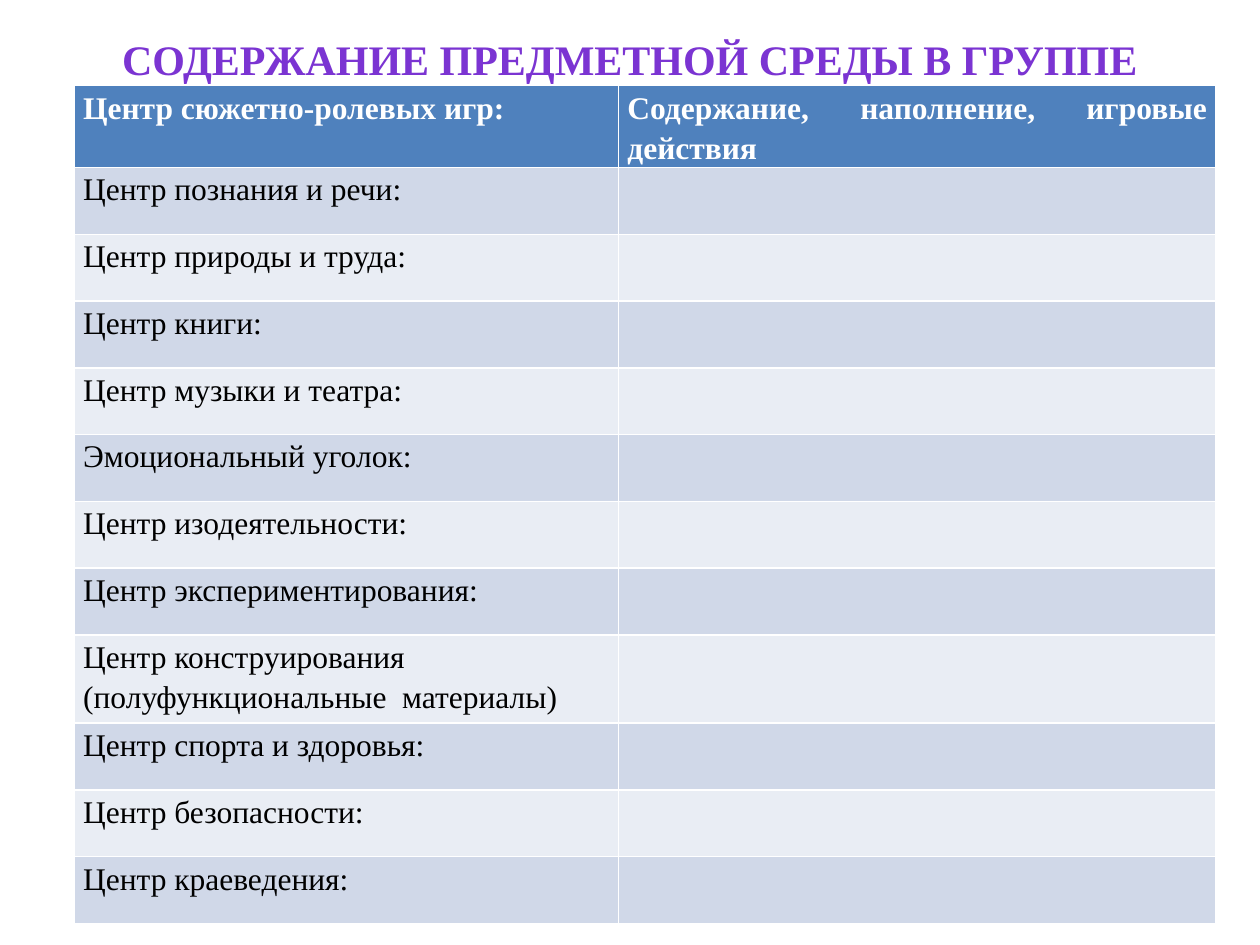
from pptx import Presentation
from pptx.dml.color import RGBColor
from pptx.enum.text import MSO_ANCHOR, PP_ALIGN
from pptx.util import Inches, Pt

CENTER, LEFT, JUSTIFY = PP_ALIGN.CENTER, PP_ALIGN.LEFT, PP_ALIGN.JUSTIFY
MIDDLE = MSO_ANCHOR.MIDDLE
FONT = "Times New Roman"
COLORS = {
    "title": "7B34D2",
    "header": "4F81BD",
    "header_text": "FFFFFF",
    "text": "000000",
    "odd_band": "D0D8E8",
    "even_band": "E9EDF4",
}

TITLE = "СОДЕРЖАНИЕ ПРЕДМЕТНОЙ СРЕДЫ В ГРУППЕ"
HEADERS = ["Центр сюжетно-ролевых игр:", "Содержание, наполнение, игровые действия"]
CENTERS = [
    "Центр познания и речи:",
    "Центр природы и труда:",
    "Центр книги:",
    "Центр музыки и театра:",
    "Эмоциональный уголок:",
    "Центр изодеятельности:",
    "Центр экспериментирования:",
    "Центр конструирования (полуфункциональные  материалы)",
    "Центр спорта и здоровья:",
    "Центр безопасности:",
    "Центр краеведения:",
]
COLUMN_WIDTHS = [4.32, 4.74]
HEADER_HEIGHT, ROW_HEIGHT, TALL_ROW_HEIGHT = 0.65, 0.53, 0.7
TALL_ROW = 8
JUSTIFIED_ROWS = 3


def write_text(text_frame, text, size=18, color="text", bold=False,
               align=LEFT, line_spacing=None):
    paragraph = text_frame.paragraphs[0]
    paragraph.alignment = align
    paragraph.line_spacing = line_spacing
    run = paragraph.add_run()
    run.text = text
    run.font.name = FONT
    run.font.size = Pt(size)
    run.font.bold = bold
    run.font.color.rgb = RGBColor.from_string(COLORS[color])


class SlideBuilder:
    """Holds the current slide and draws its elements in one style."""

    def __init__(self, presentation):
        self.slide = presentation.slides.add_slide(presentation.slide_layouts[5])

    def title(self, text, left, top, width, height):
        shape = self.slide.shapes.title
        shape.left, shape.top = Inches(left), Inches(top)
        shape.width, shape.height = Inches(width), Inches(height)
        shape.text_frame.vertical_anchor = MIDDLE
        write_text(shape.text_frame, text, size=24, color="title", bold=True, align=CENTER)

    def cell(self, cell, text, fill, **text_format):
        cell.fill.solid()
        cell.fill.fore_color.rgb = RGBColor.from_string(COLORS[fill])
        if text:
            cell.margin_left = cell.margin_right = Inches(0.07)
            cell.margin_top = cell.margin_bottom = 0
            write_text(cell.text_frame, text, line_spacing=1.15, **text_format)

    def table(self, rows, left, top, column_widths, row_heights):
        table = self.slide.shapes.add_table(
            len(rows), len(column_widths), Inches(left), Inches(top),
            Inches(sum(column_widths)), Inches(sum(row_heights))).table
        for column, width in zip(table.columns, column_widths):
            column.width = Inches(width)
        for index, (texts, height) in enumerate(zip(rows, row_heights)):
            table.rows[index].height = Inches(height)
            header = index == 0
            fill = "header" if header else "odd_band" if index % 2 else "even_band"
            for column_index, text in enumerate(texts):
                self.cell(table.cell(index, column_index), text, fill, bold=header,
                          color="header_text" if header else "text",
                          align=JUSTIFY if index < JUSTIFIED_ROWS else LEFT)


def main():
    presentation = Presentation()
    presentation.slide_width, presentation.slide_height = Inches(10), Inches(7.5)
    builder = SlideBuilder(presentation)

    # Heading
    builder.title(TITLE, 0.5, 0.19, 9, 0.55)

    # Activity centres, with the second column left to fill in
    rows = [HEADERS] + [[name, ""] for name in CENTERS]
    row_heights = [HEADER_HEIGHT] + [ROW_HEIGHT] * len(CENTERS)
    row_heights[TALL_ROW] = TALL_ROW_HEIGHT
    builder.table(rows, 0.59, 0.68, COLUMN_WIDTHS, row_heights)

    presentation.save("out.pptx")


if __name__ == "__main__":
    main()
